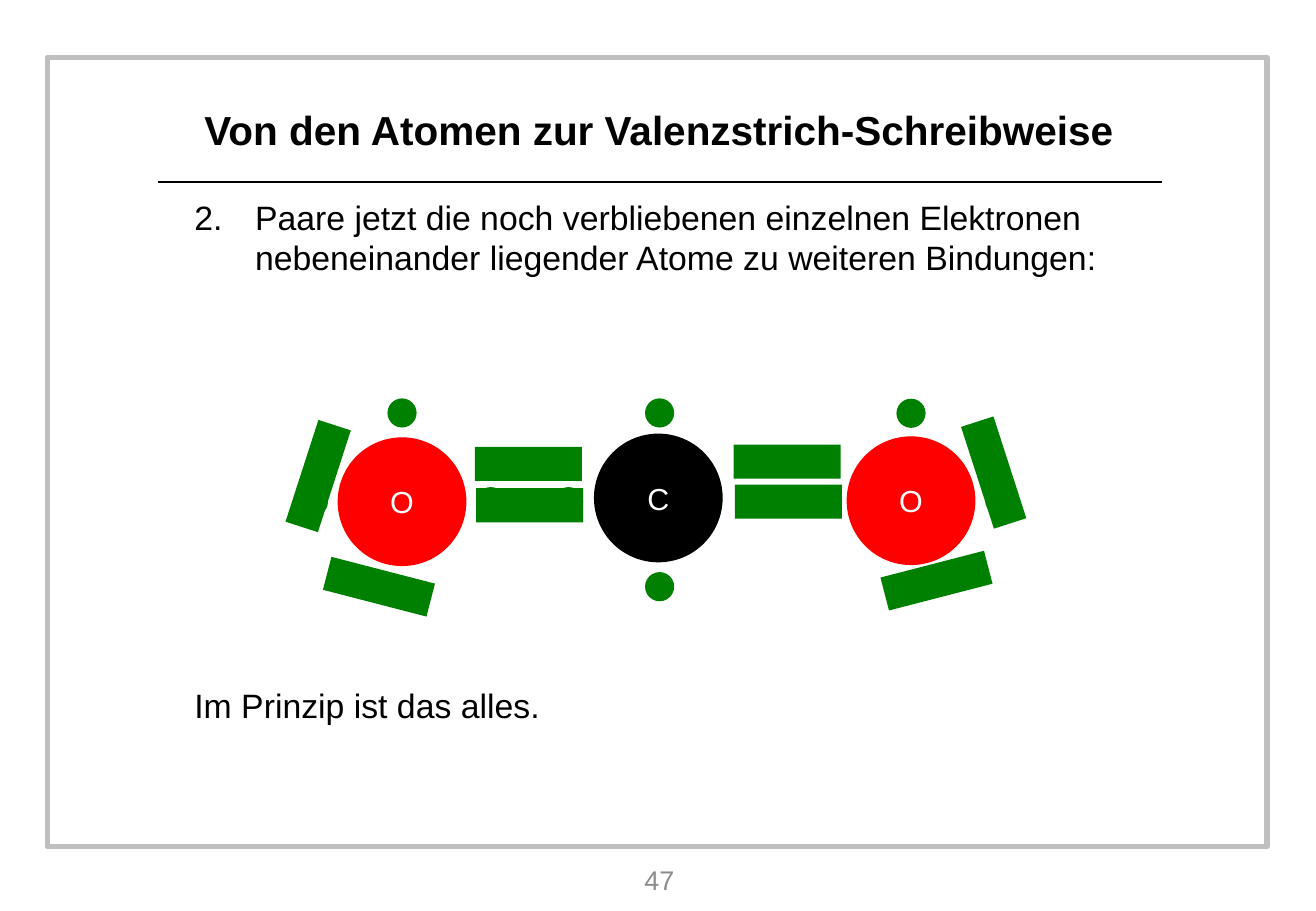
"""Build the slide on pairing the remaining electrons of carbon dioxide."""
from lxml.etree import SubElement
from pptx import Presentation
from pptx.dml.color import RGBColor
from pptx.enum.shapes import MSO_CONNECTOR, MSO_SHAPE
from pptx.enum.text import MSO_ANCHOR, MSO_AUTO_SIZE, PP_ALIGN
from pptx.oxml.ns import qn
from pptx.util import Pt

COLORS = {
    "text": "000000",
    "number": "8C8C8C",
    "frame": "BFBFBF",
    "electron": "008000",
    "carbon": "000000",
    "oxygen": "FF0000",
    "symbol": "FFFFFF",
}
ATOM_SIZE = (76.3, 76.3)
ELECTRON_SIZE = (17.3, 17.3)
PAIR_SIZE = (63.4, 20.2)

ATOMS = [
    ("C", "carbon", 390.2, 295.2),
    ("O", "oxygen", 540, 296.8),
    ("O", "oxygen", 238.3, 297.4),
]
ELECTRONS = [
    (391, 244.8), (391, 347.8), (540, 245), (238.3, 244.8),
    (185.8, 297.4), (592.6, 296.6), (290.9, 297.4), (337, 297.4),
]
PAIRS = [
    (313.9, 299.5, 0), (313.2, 275, 0),
    (467.3, 297.4, 0), (466.6, 273.6, 0),
    (224.6, 347.8, 14.5), (555.1, 344.2, -14.5),
    (188.6, 282.2, -72.1), (589, 280.1, 72.1),
]


def rgb(color):
    return RGBColor.from_string(COLORS[color])


def apply_format(target, values):
    for attribute, value in values.items():
        setattr(target, attribute, value)


def place(holder, left, top, width, height):
    apply_format(holder, {"left": Pt(left), "top": Pt(top),
                          "width": Pt(width), "height": Pt(height)})


def write(paragraph, text, size, color, bold=False, **layout):
    run = paragraph.add_run()
    run.text = text
    apply_format(run.font, {"name": "Arial", "size": Pt(size), "bold": bold})
    run.font.color.rgb = rgb(color)
    apply_format(paragraph, layout)


def prepare_frame(holder, anchor):
    frame = holder.text_frame
    apply_format(frame, {"word_wrap": True, "auto_size": MSO_AUTO_SIZE.NONE,
                         "vertical_anchor": anchor})
    return frame


def set_list_style(paragraph, margin, start=None):
    properties = paragraph._p.get_or_add_pPr()
    properties.set("marL", str(Pt(margin)))
    properties.set("indent", str(-Pt(margin)))
    if start is None:
        SubElement(properties, qn("a:buNone"))
    else:
        SubElement(properties, qn("a:buFont"), typeface="+mj-lt")
        SubElement(properties, qn("a:buAutoNum"), type="arabicPeriod", startAt=str(start))


def add_figure(slide, kind, center_x, center_y, size, color, rotation=0):
    width, height = size
    figure = slide.shapes.add_shape(
        kind, Pt(center_x - width / 2), Pt(center_y - height / 2), Pt(width), Pt(height))
    figure.shadow.inherit = False
    figure.fill.solid()
    figure.fill.fore_color.rgb = rgb(color)
    figure.line.fill.background()
    figure.rotation = rotation
    return figure


def add_atom(slide, symbol, color, center_x, center_y):
    atom = add_figure(slide, MSO_SHAPE.OVAL, center_x, center_y, ATOM_SIZE, color)
    frame = prepare_frame(atom, MSO_ANCHOR.MIDDLE)
    write(frame.paragraphs[0], symbol, 18, "symbol", alignment=PP_ALIGN.CENTER)


def add_border(slide):
    border = slide.shapes.add_shape(MSO_SHAPE.RECTANGLE, Pt(28), Pt(34), Pt(723), Pt(468))
    border.shadow.inherit = False
    border.fill.background()
    border.line.color.rgb = rgb("frame")
    border.line.width = Pt(3)


def add_title_rule(slide):
    rule = slide.shapes.add_connector(
        MSO_CONNECTOR.STRAIGHT, Pt(93.6), Pt(107.8), Pt(688.8), Pt(107.8))
    rule.line.color.rgb = rgb("text")
    rule.line.width = Pt(1.5)
    SubElement(rule._element.spPr, qn("a:effectLst"))


def fill_title(title):
    place(title, 107.3, 48.2, 566.6, 56.9)
    frame = prepare_frame(title, MSO_ANCHOR.MIDDLE)
    write(frame.paragraphs[0], "Von den Atomen zur Valenzstrich-Schreibweise",
          24, "text", True, alignment=PP_ALIGN.CENTER)


def fill_body(body):
    place(body, 108, 113, 566.6, 340)
    frame = prepare_frame(body, MSO_ANCHOR.TOP)
    step = frame.paragraphs[0]
    write(step, "Paare jetzt die noch verbliebenen einzelnen Elektronen "
          "nebeneinander liegender Atome zu weiteren Bindungen:",
          20, "text", space_before=Pt(3))
    set_list_style(step, 36, 2)
    conclusion = frame.add_paragraph()
    write(conclusion, "Im Prinzip ist das alles.", 20, "text", space_before=Pt(241))
    set_list_style(conclusion, 0)


def add_page_number(slide):
    number = slide.shapes.add_textbox(Pt(303), Pt(507.6), Pt(175.7), Pt(28))
    frame = prepare_frame(number, MSO_ANCHOR.MIDDLE)
    write(frame.paragraphs[0], "47", 16, "number", alignment=PP_ALIGN.CENTER)


def main():
    presentation = Presentation()
    apply_format(presentation, {"slide_width": Pt(780), "slide_height": Pt(540)})
    slide = presentation.slides.add_slide(presentation.slide_layouts[1])
    add_border(slide)
    add_title_rule(slide)
    fill_title(slide.shapes.title)
    fill_body(slide.placeholders[1])
    add_page_number(slide)
    for center_x, center_y in ELECTRONS:
        add_figure(slide, MSO_SHAPE.OVAL, center_x, center_y, ELECTRON_SIZE, "electron")
    for atom in ATOMS:
        add_atom(slide, *atom)
    for center_x, center_y, rotation in PAIRS:
        add_figure(slide, MSO_SHAPE.RECTANGLE, center_x, center_y,
                   PAIR_SIZE, "electron", rotation)
    presentation.save("out.pptx")


if __name__ == "__main__":
    main()
